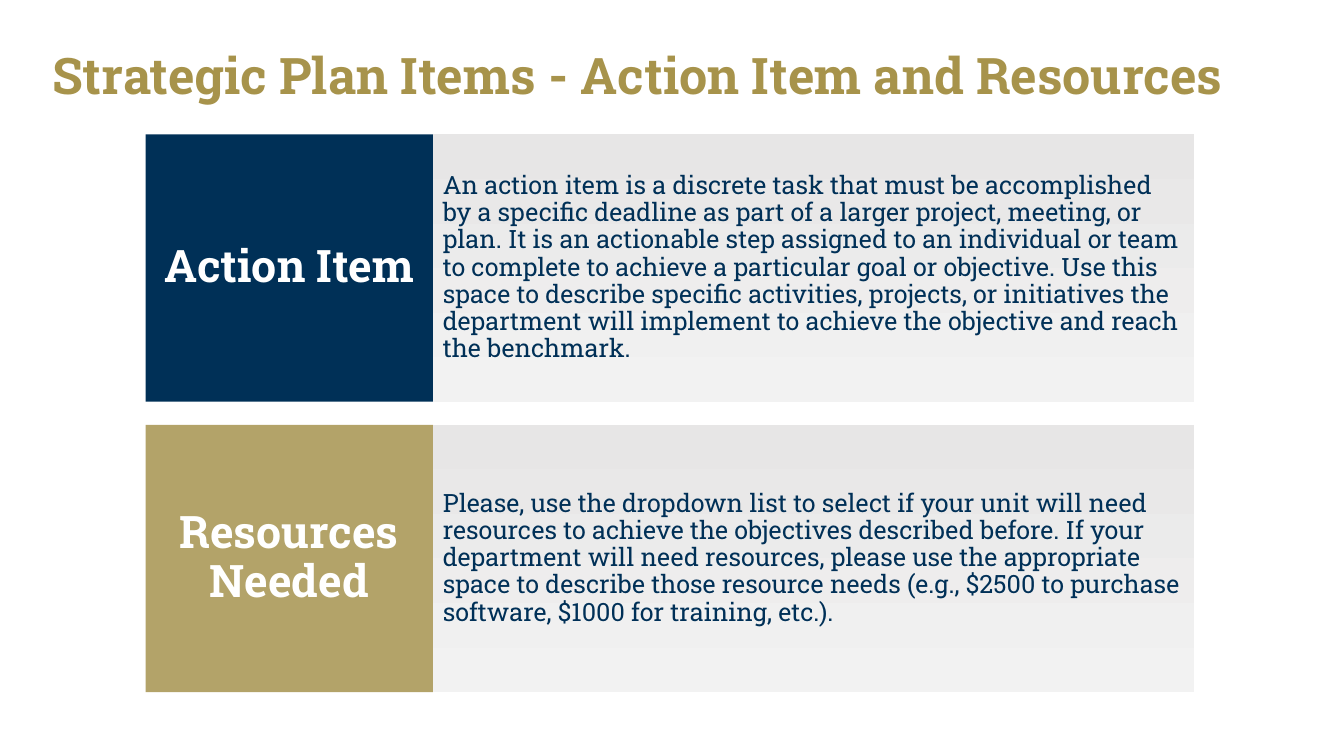
from dataclasses import dataclass

from pptx import Presentation
from pptx.dml.color import RGBColor
from pptx.enum.shapes import MSO_SHAPE
from pptx.enum.text import MSO_ANCHOR, PP_ALIGN
from pptx.util import Cm, Pt

RECT = MSO_SHAPE.RECTANGLE
MIDDLE = MSO_ANCHOR.MIDDLE
LEFT, CENTER = PP_ALIGN.LEFT, PP_ALIGN.CENTER


@dataclass(frozen=True)
class Theme:
    font: str = "Roboto Slab"
    title_color: str = "A7934B"
    navy: str = "003057"
    gold: str = "B3A369"
    white: str = "FFFFFF"
    panel_stops: tuple = ("F2F2F2", "E7E6E6")
    title_size: int = 36
    label_size: int = 32
    body_size: int = 18
    line_spacing: float = 0.9


class SlideBuilder:
    def __init__(self, prs, theme):
        self.theme = theme
        self.slide = prs.slides.add_slide(prs.slide_layouts[6])

    def set_text(self, shape, text, size, color, bold=False, align=LEFT):
        tf = shape.text_frame
        tf.word_wrap = True
        tf.vertical_anchor = MIDDLE
        p = tf.paragraphs[0]
        p.alignment = align
        p.line_spacing = self.theme.line_spacing
        r = p.add_run()
        r.text = text
        formats = {"name": self.theme.font, "size": Pt(size), "bold": bold}
        for name, value in formats.items():
            setattr(r.font, name, value)
        r.font.color.rgb = RGBColor.from_string(color)

    def title(self, text, left, top, width, height):
        t = self.theme
        s = self.slide.shapes.add_textbox(Cm(left), Cm(top), Cm(width), Cm(height))
        self.set_text(s, text, t.title_size, t.title_color, bold=True)

    def block(self, left, top, width, height):
        s = self.slide.shapes.add_shape(RECT, Cm(left), Cm(top), Cm(width), Cm(height))
        s.shadow.inherit = False
        s.line.fill.background()
        return s

    def label(self, text, color, *box):
        t = self.theme
        s = self.block(*box)
        s.fill.solid()
        s.fill.fore_color.rgb = RGBColor.from_string(color)
        self.set_text(s, text, t.label_size, t.white, bold=True, align=CENTER)

    def panel(self, text, *box):
        """Add a description on a grey gradient that darkens towards the top."""
        t = self.theme
        s = self.block(*box)
        s.fill.gradient()
        s.fill.gradient_angle = 90
        for stop, color in zip(s.fill.gradient_stops, t.panel_stops):
            stop.color.rgb = RGBColor.from_string(color)
        self.set_text(s, text, t.body_size, t.navy)


def main():
    prs = Presentation()
    prs.slide_width, prs.slide_height = Cm(33.87), Cm(19.05)
    theme = Theme()
    builder = SlideBuilder(prs, theme)
    builder.title("Strategic Plan Items - Action Item and Resources",
                  1.07, 0.56, 31.75, 2.82)

    items = [
        ("Action Item", theme.navy,
         "An action item is a discrete task that must be accomplished by a "
         "specific deadline as part of a larger project, meeting, or plan. It is "
         "an actionable step assigned to an individual or team to complete to "
         "achieve a particular goal or objective. Use this space to describe "
         "specific activities, projects, or initiatives the department will "
         "implement to achieve the objective and reach the benchmark."),
        ("Resources Needed", theme.gold,
         "Please, use the dropdown list to select if your unit will need "
         "resources to achieve the objectives described before. If your "
         "department will need resources, please use the appropriate space to "
         "describe those resource needs (e.g., $2500 to purchase software, "
         "$1000 for training, etc.)."),
    ]
    left, top, label_width, panel_width = 3.67, 3.39, 7.24, 19.18
    row_height, row_step = 6.73, 7.32
    for i, (label, color, description) in enumerate(items):
        y = top + i * row_step
        builder.panel(description, left + label_width, y, panel_width, row_height)
        builder.label(label, color, left, y, label_width, row_height)

    prs.save("out.pptx")


if __name__ == "__main__":
    main()
